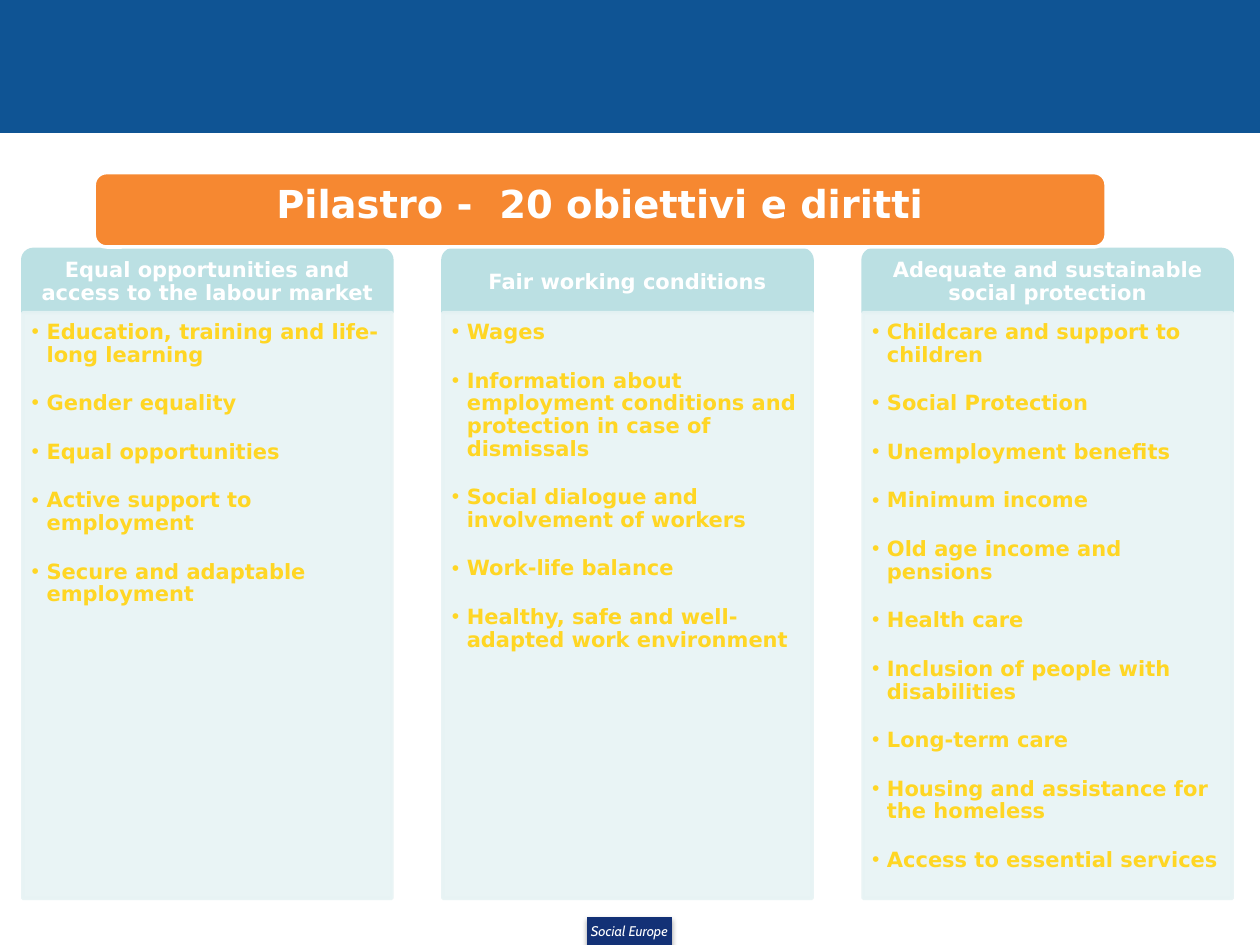
import lxml.etree
import pptx
import pptx.dml.color
import pptx.enum.shapes
import pptx.enum.text
import pptx.oxml.ns
import pptx.util

Cm = pptx.util.Cm
Pt = pptx.util.Pt
SHAPES = pptx.enum.shapes.MSO_SHAPE
ALIGN = pptx.enum.text.PP_ALIGN
ANCHOR = pptx.enum.text.MSO_ANCHOR

BLUE, NAVY, ORANGE = "0F5494", "133176", "F68831"
TEAL, PALE, YELLOW, WHITE = "BBE0E3", "E7F3F4", "FFD624", "FFFFFF"
FONT = "DejaVu Sans"

COLUMNS = [
    ("Equal opportunities and access to the labour market", [
        "Education, training and life-long learning",
        "Gender equality",
        "Equal opportunities",
        "Active support to employment",
        "Secure and adaptable employment",
    ]),
    ("Fair working conditions", [
        "Wages",
        "Information about employment conditions and protection in case of dismissals",
        "Social dialogue and involvement of workers",
        "Work-life balance",
        "Healthy, safe and well-adapted work environment",
    ]),
    ("Adequate and sustainable social protection", [
        "Childcare and support to children",
        "Social Protection",
        "Unemployment benefits",
        "Minimum income",
        "Old age income and pensions",
        "Health care",
        "Inclusion of people with disabilities",
        "Long-term care",
        "Housing and assistance for the homeless",
        "Access to essential services",
    ]),
]
COLUMN_LEFT, COLUMN_PITCH, COLUMN_WIDTH = 0.46, 8.47, 7.44
HEADER_TOP, HEADER_HEIGHT, LIST_HEIGHT = 5.03, 1.27, 11.81


def color(value):
    return pptx.dml.color.RGBColor.from_string(value)


def add_element(parent, tag, **attributes):
    return lxml.etree.SubElement(parent, pptx.oxml.ns.qn(tag), attributes)


def place(shape, left, top, width, height):
    shape.left, shape.top = Cm(left), Cm(top)
    shape.width, shape.height = Cm(width), Cm(height)


def paint(shape, fill, line, weight):
    shape.fill.solid()
    shape.fill.fore_color.rgb = color(fill)
    shape.line.color.rgb = color(line)
    shape.line.width = Pt(weight)


def add_panel(slide, kind, box, fill, line=None, weight=2):
    shape = slide.shapes.add_shape(kind, *map(Cm, box))
    shape.shadow.inherit = False
    paint(shape, fill, line or fill, weight)
    return shape


def write_text(shape, lines, *, size, fill, font=FONT, bold=True, italic=False,
               align=ALIGN.CENTER, anchor=ANCHOR.MIDDLE, insets=(0.23, 0.13, 0.23, 0.13),
               spacing=0.9, after=0, bullet=None, wrap=True):
    frame = shape.text_frame
    frame.auto_size = pptx.enum.text.MSO_AUTO_SIZE.NONE
    frame.word_wrap = wrap
    frame.vertical_anchor = anchor
    (frame.margin_left, frame.margin_top,
     frame.margin_right, frame.margin_bottom) = map(Cm, insets)
    for index, line in enumerate(lines):
        paragraph = frame.add_paragraph() if index else frame.paragraphs[0]
        if bullet:
            properties = paragraph._p.get_or_add_pPr()
            properties.set("marL", str(Cm(0.3)))
            properties.set("indent", str(-Cm(0.3)))
            add_element(properties, "a:buChar", char=bullet)
        paragraph.alignment = align
        paragraph.line_spacing = spacing
        paragraph.space_before = Pt(0)
        paragraph.space_after = Pt(after)
        run = paragraph.add_run()
        run.text = line
        run.font.name, run.font.size = font, Pt(size)
        run.font.bold, run.font.italic = bold, italic
        run.font.color.rgb = color(fill)


def set_transparency(shape, opacity):
    for fill in shape._element.spPr.iter(pptx.oxml.ns.qn("a:srgbClr")):
        add_element(fill, "a:alpha", val=str(opacity * 1000))


def add_shadow(shape):
    effects = shape._element.spPr.find(pptx.oxml.ns.qn("a:effectLst"))
    shadow = add_element(effects, "a:outerShdw", blurRad=str(Pt(3.1)), dist=str(Pt(1.8)),
                         dir="5400000", rotWithShape="0")
    shade = add_element(shadow, "a:srgbClr", val="000000")
    add_element(shade, "a:alpha", val="35000")


def add_column(slide, placeholder, left, heading, items):
    header = add_panel(slide, SHAPES.ROUND_2_SAME_RECTANGLE,
                       (left, HEADER_TOP, COLUMN_WIDTH, HEADER_HEIGHT), TEAL)
    write_text(header, [heading], size=12, fill=WHITE)
    place(placeholder, left, HEADER_TOP + HEADER_HEIGHT, COLUMN_WIDTH, LIST_HEIGHT)
    paint(placeholder, PALE, PALE, 2)
    set_transparency(placeholder, 90)
    write_text(placeholder, items, size=12, fill=YELLOW, align=ALIGN.LEFT, anchor=ANCHOR.TOP,
               insets=(0.18, 0.18, 0.23, 0.25), after=14.8, bullet="•")
    slide.shapes._spTree.append(placeholder._element)


def add_title(slide, text):
    add_panel(slide, SHAPES.ROUNDED_RECTANGLE, (1.9, 3.48, 20.4, 1.5), ORANGE, WHITE)
    title = slide.shapes.title
    place(title, 2.49, 3.48, 19.2, 1.35)
    write_text(title, [text], size=22, fill=WHITE, insets=(0.23,) * 4)
    slide.shapes._spTree.append(title._element)


def add_label(slide, text):
    label = add_panel(slide, SHAPES.RECTANGLE, (11.84, 18.49, 1.7, 0.56), NAVY, weight=0.75)
    add_shadow(label)
    write_text(label, [text], size=8, fill=WHITE, font="Cabin", bold=False, italic=True,
               insets=(0,) * 4, spacing=1, wrap=False)


def main():
    presentation = pptx.Presentation()
    presentation.slide_width, presentation.slide_height = Cm(25.4), Cm(19.05)
    slide = presentation.slides.add_slide(presentation.slide_layouts.get_by_name("Comparison"))
    title, *bodies = slide.placeholders
    add_panel(slide, SHAPES.RECTANGLE, (0, 0, 25.4, 2.67), BLUE, weight=0.75)
    add_label(slide, "Social Europe")
    for index, (heading, items) in enumerate(COLUMNS):
        add_column(slide, bodies[index], COLUMN_LEFT + index * COLUMN_PITCH, heading, items)
    for unused in bodies[len(COLUMNS):]:
        unused._element.getparent().remove(unused._element)
    add_title(slide, "Pilastro -  20 obiettivi e diritti")
    presentation.save("out.pptx")


if __name__ == "__main__":
    main()
